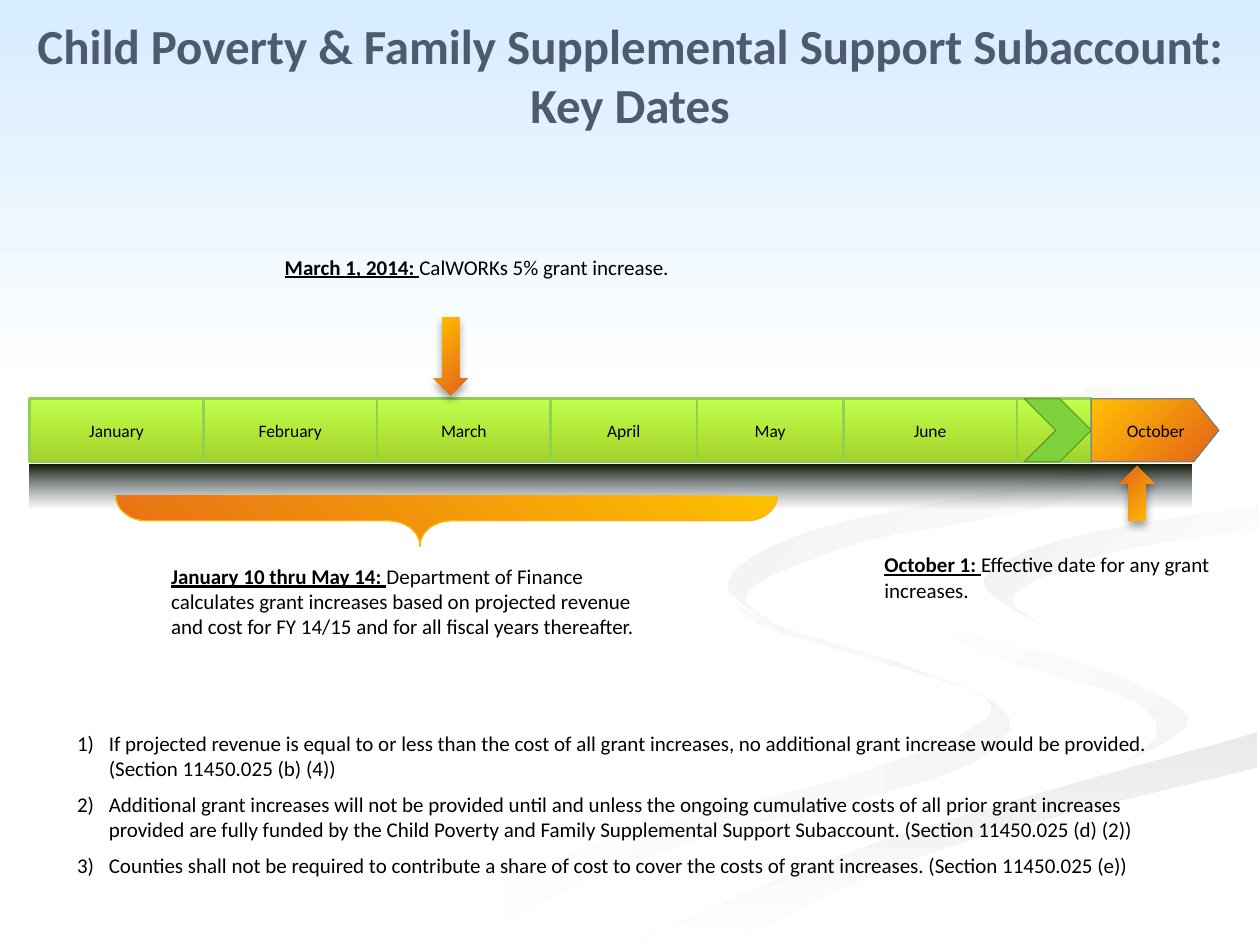
from lxml import etree
from pptx import Presentation
from pptx.dml.color import RGBColor
from pptx.enum.shapes import MSO_SHAPE
from pptx.enum.text import MSO_ANCHOR, MSO_AUTO_SIZE, PP_ALIGN
from pptx.oxml.ns import qn
from pptx.util import Cm, Pt

RECT, PENTAGON, CHEVRON = MSO_SHAPE.RECTANGLE, MSO_SHAPE.PENTAGON, MSO_SHAPE.CHEVRON
DOWN_ARROW, RIGHT_BRACE = MSO_SHAPE.DOWN_ARROW, MSO_SHAPE.RIGHT_BRACE
CENTER, LEFT = PP_ALIGN.CENTER, PP_ALIGN.LEFT
MIDDLE, TOP = MSO_ANCHOR.MIDDLE, MSO_ANCHOR.TOP
NO_FIT = MSO_AUTO_SIZE.NONE

FONT = "Calibri"
BLACK, SLATE = "000000", "4E5B6F"
GREEN = ("C0FF4D", "A4D329", 90)
ORANGE = ("FFC000", "E36119", 45)
MONTHS = [("January", 3.5), ("February", 3.5), ("March", 3.5),
          ("April", 2.95), ("May", 2.95), ("June", 3.5)]
NOTES = [
    "If projected revenue is equal to or less than the cost of all grant increases, no additional "
    "grant increase would be provided. (Section 11450.025 (b) (4))",
    "Additional grant increases will not be provided until and unless the ongoing cumulative costs "
    "of all prior grant increases provided are fully funded by the Child Poverty and Family "
    "Supplemental Support Subaccount. (Section 11450.025 (d) (2))",
    "Counties shall not be required to contribute a share of cost to cover the costs of grant "
    "increases. (Section 11450.025 (e))",
]

# Gradient and the two edges of each ribbon, in thousandths of the slide width
RIBBON_UNIT = Cm(0.0254)
CURVE_STEPS = 6
RIBBONS = [
    (("FFFFFF", "F5F5F5", 0),
     [(575, 459), (602, 495), (714, 530), (781, 553), (800, 581), (740, 618), (532, 674), (361, 749)],
     [(300, 749), (458, 674), (684, 613), (786, 566), (731, 533), (602, 490), (575, 459)]),
    (("FFFFFF", "F5F5F5", 45),
     [(724, 464), (766, 512), (892, 553), (918, 581), (894, 605)],
     [(894, 605), (943, 570), (870, 530), (758, 498), (724, 464)]),
    (("EAEAEA", "FFFFFF", 90),
     [(503, 749), (696, 669), (998, 581)],
     [(998, 609), (752, 672), (571, 749)]),
    (("F1F1F1", "FFFFFF", 45),
     [(998, 402), (849, 427), (781, 460), (826, 496)],
     [(826, 496), (805, 472), (878, 439), (998, 420)]),
    (("EDEDED", "FFFFFF", 45),
     [(762, 233), (880, 307), (855, 391), (683, 430), (593, 470), (622, 500)],
     [(622, 500), (578, 462), (649, 420), (842, 378), (885, 335), (762, 233)]),
]


def rgb(color):
    return RGBColor.from_string(color)


def smooth_edge(points):
    """Catmull-Rom curve through the points."""
    padded = [points[0], *points, points[-1]]
    curve = []
    for a, b, c, d in zip(padded, padded[1:], padded[2:], padded[3:]):
        for step in range(CURVE_STEPS):
            t = step / CURVE_STEPS
            curve.append(tuple(
                q + t / 2 * (r - p + t * (2 * p - 5 * q + 4 * r - u + t * (3 * q - p - 3 * r + u)))
                for p, q, r, u in zip(a, b, c, d)))
    return curve + [points[-1]]


def fill_gradient(sp, start, end, angle):
    """Fill from start to end, with the angle in degrees clockwise."""
    sp.fill.gradient()
    sp.fill.gradient_angle = (360 - angle) % 360
    for stop, color in zip(sp.fill.gradient_stops, (start, end)):
        stop.color.rgb = rgb(color)


def style(sp, gradient, line=None, width=0.75):
    sp.shadow.inherit = False
    fill_gradient(sp, *gradient)
    if line:
        sp.line.color.rgb = rgb(line)
        sp.line.width = Pt(width)
    else:
        sp.line.fill.background()


def add_shape(s, kind, box, gradient, line=None, width=0.75):
    sp = s.shapes.add_shape(kind, *map(Cm, box))
    style(sp, gradient, line, width)
    return sp


def add_run(p, text, size, color=BLACK, bold=False, underline=False):
    r = p.add_run()
    r.text = text
    r.font.name, r.font.size = FONT, Pt(size)
    r.font.bold, r.font.underline = bold, underline
    r.font.color.rgb = rgb(color)


def add_label(sp, text):
    tf = sp.text_frame
    tf.word_wrap, tf.vertical_anchor = True, MIDDLE
    p = tf.paragraphs[0]
    p.alignment = CENTER
    add_run(p, text, 10)


def place(sp, box):
    """Move a placeholder to the box and to the front."""
    sp.left, sp.top, sp.width, sp.height = map(Cm, box)
    sp.element.getparent().append(sp.element)
    sp.text_frame.auto_size = NO_FIT
    return sp.text_frame


def add_backdrop(s, box):
    for gradient, near, far in RIBBONS:
        outline = smooth_edge(near) + smooth_edge(far)
        builder = s.shapes.build_freeform(*outline[0], scale=RIBBON_UNIT)
        builder.add_line_segments(outline[1:], close=True)
        style(builder.convert_to_shape(), gradient)
    add_shape(s, RECT, box, ("D6ECFF", "FFFFFF", 90))


def add_title(s, box):
    tf = place(s.shapes.title, box)
    tf.margin_left = tf.margin_right = 0
    tf.vertical_anchor = MIDDLE
    p = tf.paragraphs[0]
    p.alignment = CENTER
    add_run(p, "Child Poverty & Family Supplemental Support Subaccount: Key Dates", 28, SLATE, True)


def add_timeline(s, box):
    left, top, width, height = box
    shade = add_shape(s, RECT, (left, top + 1.32, 23.42, 0.89), ("0D1605", SLATE, 90))
    last_color = shade.element.spPr.findall(".//" + qn("a:srgbClr"))[-1]
    etree.SubElement(last_color, qn("a:alpha"), val="0")

    x = left
    for month, month_width in MONTHS:
        sp = add_shape(s, RECT, (x, top, month_width, height), GREEN, "92D050", 1.5)
        add_label(sp, month)
        x += month_width
    gap = 1.5
    add_shape(s, RECT, (x, top, gap, height), GREEN, "92D050", 1.5)
    add_shape(s, CHEVRON, (x + 0.15, top, gap - 0.15, height), ("7FD13B", "7FD13B", 0), "5FA326")
    x += gap
    october = add_shape(s, PENTAGON, (x, top, left + width - x, height), ORANGE, "808080")
    october.adjustments[0] = 0.4
    add_label(s.shapes.add_textbox(*map(Cm, (x + 0.25, top + 0.3, 2.1, 0.69))), "October")


def add_arrow(s, box, rotation=0):
    sp = add_shape(s, DOWN_ARROW, box, ORANGE)
    sp.rotation = rotation
    effects = sp.element.spPr.find(qn("a:effectLst"))
    shadow = etree.SubElement(effects, qn("a:outerShdw"), blurRad=str(Pt(5)), dist=str(Pt(3)),
                              dir="5400000", rotWithShape="0")
    color = etree.SubElement(shadow, qn("a:srgbClr"), val=BLACK)
    etree.SubElement(color, qn("a:alpha"), val="40000")


def add_brace(s, box):
    """Brace pointing down, turned from an upright one with the same centre."""
    left, top, width, height = box
    upright = (left + (width - height) / 2, top + (height - width) / 2, height, width)
    sp = add_shape(s, RIGHT_BRACE, upright, ("FFC000", "E76F15", 45), "FEB80A")
    sp.rotation = 90
    sp.adjustments[0], sp.adjustments[1] = 0.62, 0.54


def add_callout(s, box, date, text):
    tf = s.shapes.add_textbox(*map(Cm, box)).text_frame
    tf.word_wrap = True
    p = tf.paragraphs[0]
    add_run(p, date + ": ", 12, bold=True, underline=True)
    add_run(p, text, 12)


def add_notes_list(s, box):
    tf = place(s.placeholders[1], box)
    tf.vertical_anchor = TOP
    for i, note in enumerate(NOTES):
        p = tf.add_paragraph() if i else tf.paragraphs[0]
        pPr = p._p.get_or_add_pPr()
        pPr.set("marL", str(Cm(0.64)))
        pPr.set("indent", str(-Cm(0.64)))
        etree.SubElement(pPr, qn("a:buFont"), typeface="+mj-lt")
        etree.SubElement(pPr, qn("a:buAutoNum"), type="arabicParenR")
        p.alignment = LEFT
        p.space_before, p.space_after = Pt(0), Pt(6)
        add_run(p, note, 12)


def main():
    prs = Presentation()
    prs.slide_width, prs.slide_height = Cm(25.4), Cm(19.05)
    s = prs.slides.add_slide(prs.slide_layouts[1])
    add_backdrop(s, (0, 0, 25.4, 7.82))
    add_timeline(s, (0.6, 8.04, 23.97, 1.27))
    add_arrow(s, (8.74, 6.4, 0.69, 1.57))
    add_arrow(s, (22.58, 9.4, 0.69, 1.09), 180)
    add_brace(s, (2.33, 9.99, 13.34, 1.02))
    add_title(s, (0.2, 0.23, 25, 2.54))
    add_callout(s, (5.49, 5, 8.89, 0.76), "March 1, 2014", "CalWORKs 5% grant increase.")
    add_callout(s, (3.2, 11.23, 10.11, 1.8), "January 10 thru May 14",
                "Department of Finance calculates grant increases based on projected revenue "
                "and cost for FY 14/15 and for all fiscal years thereafter.")
    add_callout(s, (17.58, 11, 7.65, 1.3), "October 1", "Effective date for any grant increases.")
    add_notes_list(s, (1.3, 14.6, 22.86, 3.76))
    prs.save("out.pptx")


if __name__ == "__main__":
    main()
